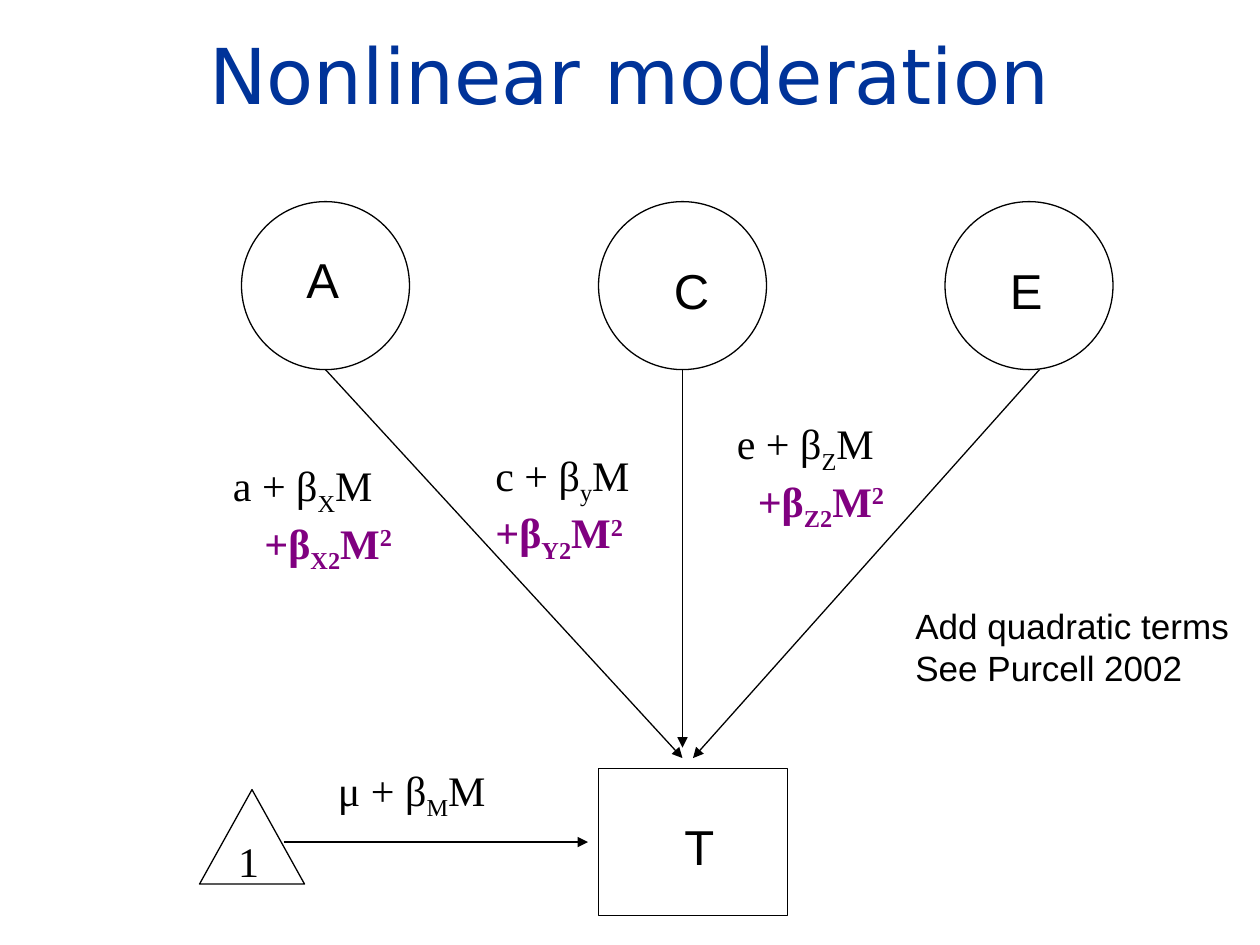
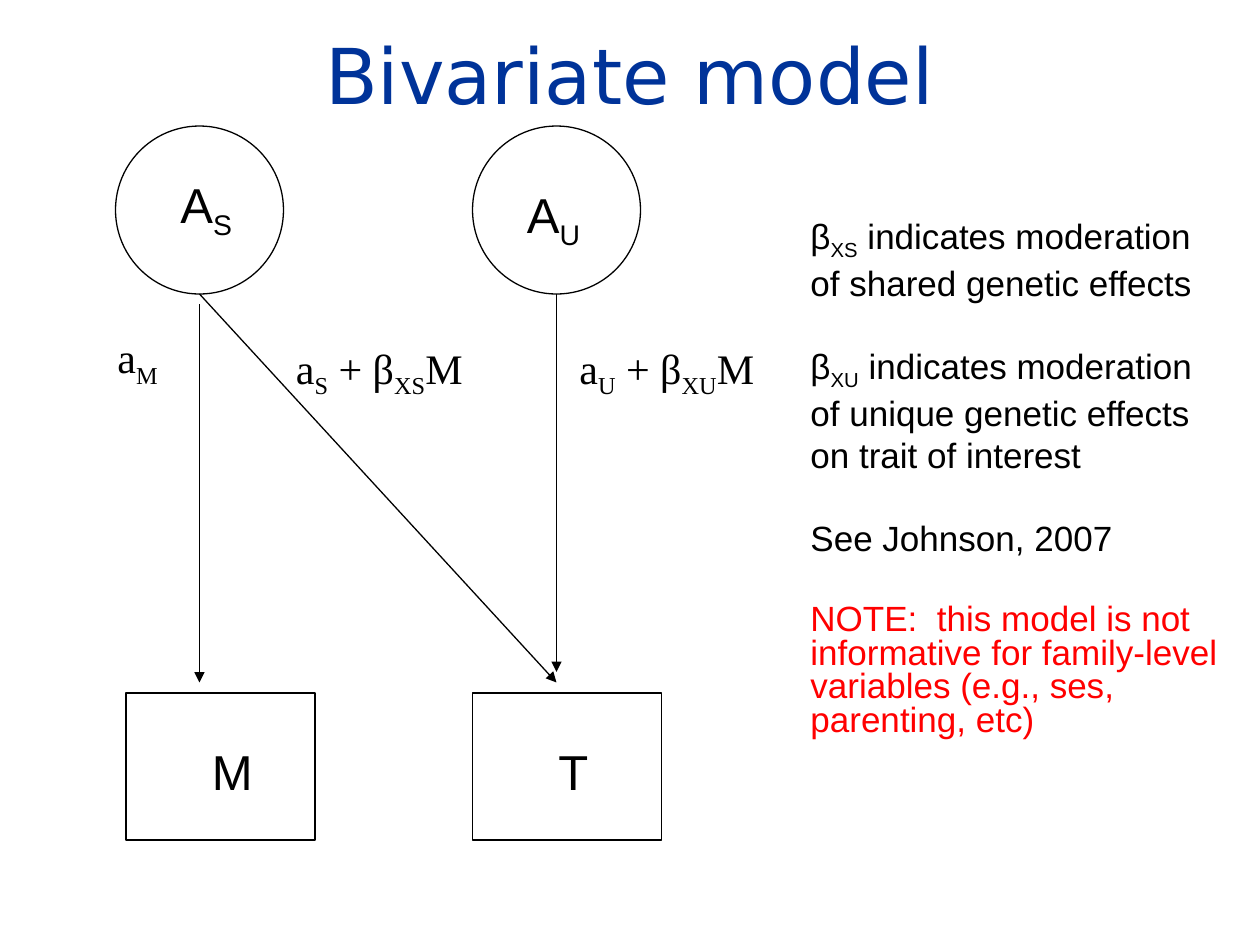
from pptx import Presentation
from pptx.dml.color import RGBColor
from pptx.enum.shapes import MSO_CONNECTOR, MSO_SHAPE
from pptx.enum.text import MSO_ANCHOR, MSO_AUTO_SIZE, PP_ALIGN
from pptx.oxml.ns import qn
from pptx.util import Emu, Pt
from lxml import etree

PX = 7620  # 120 px to the inch
BLACK = RGBColor(0x00, 0x00, 0x00)
BLUE = RGBColor(0x00, 0x33, 0x99)
PURPLE = RGBColor(0x80, 0x00, 0x80)
RED = RGBColor(0xFF, 0x00, 0x00)
SANS, SERIF, TITLE_FONT = "Arial", "Times New Roman", "DejaVu Sans"
LEFT, CENTER = PP_ALIGN.LEFT, PP_ALIGN.CENTER
MIDDLE, FIT_TEXT = MSO_ANCHOR.MIDDLE, MSO_AUTO_SIZE.SHAPE_TO_FIT_TEXT
STRAIGHT = MSO_CONNECTOR.STRAIGHT
CIRCLE, BOX, TRIANGLE = MSO_SHAPE.OVAL, MSO_SHAPE.RECTANGLE, MSO_SHAPE.ISOSCELES_TRIANGLE

NODE_SIZES = {CIRCLE: (160, 160), BOX: (180, 140), TRIANGLE: (100, 90)}
TITLE_BOX = (90, 20, 1020, 150)
TITLE = dict(font=TITLE_FONT, size=44, color=BLUE, align=CENTER)
SYMBOL = dict(size=28, fit=True)
FORMULA = dict(font=SERIF, size=24, fit=True)
NOTE = dict(size=20, fit=True)
BASELINES = {"_": "-25000", "^": "30000"}

# Text: "|" parts runs, "_" lowers, "^" raises, "*" starts bold purple.
# Nodes: kind, left, top. Symbols: text, left, top, width.
# Arrows: from x, y, to x, y. Formulas and notes: box, paragraphs, format.
SLIDES = [
    dict(
        title="Nonlinear moderation",
        nodes=[(CIRCLE, 230, 192), (CIRCLE, 570, 192), (CIRCLE, 900, 192),
               (BOX, 570, 732), (TRIANGLE, 190, 752)],
        symbols=[("A", 280, 232, 60), ("C", 630, 242, 60),
                 ("E", 950, 242, 60), ("T", 640, 772, 60)],
        arrows=[(310, 352, 650, 722), (650, 352, 650, 712),
                (990, 352, 660, 722), (270, 802, 560, 802)],
        formulas=[
            ((210, 432, 193, 109), ["a + β|_X|M", "*+β|_X2|M|^2"], dict(indent=30)),
            ((460, 422, 163, 109), ["c + β|_y|M |*+β|_Y2|M|^2"], {}),
            ((690, 392, 206, 109), ["e + β|_Z|M", "*+β|_Z2|M|^2"], dict(indent=20)),
            ((310, 722, 200, 60), ["μ + β|_M|M"], {}),
        ],
        notes=[((860, 570, 325, 92), ["Add quadratic terms", "See Purcell 2002"], {})],
    ),
    dict(
        title="Bivariate model",
        nodes=[(CIRCLE, 110, 120), (CIRCLE, 450, 120), (BOX, 120, 660), (BOX, 450, 660)],
        symbols=[("A|_S", 160, 160, 90), ("A|_U", 490, 170, 90),
                 ("M", 190, 700, 60), ("T", 520, 700, 60)],
        arrows=[(190, 280, 530, 650), (530, 280, 530, 640), (190, 290, 190, 650)],
        formulas=[
            ((100, 310, 80, 60), ["a|_M"], {}),
            ((270, 320, 205, 60), ["a|_S| + β|_XS|M"], {}),
            ((540, 320, 240, 60), ["a|_U| + β|_XU|M"], {}),
        ],
        notes=[
            ((760, 198, 397, 335),
             ["β|_XS| indicates moderation", "of shared genetic effects",
              "β|_XU| indicates moderation", "of unique genetic effects",
              "on trait of interest", "See Johnson, 2007"],
             dict(gaps={2: 23, 5: 23})),
            ((760, 570, 440, 142),
             ["NOTE:  this model is not informative for family-level variables "
              "(e.g., ses, parenting, etc)"],
             dict(color=RED, line_spacing=0.8)),
        ],
    ),
]


def lengths(*values):
    return [Emu(value * PX) for value in values]


def write(frame, paragraphs, *, font=SANS, size=20, color=BLACK, align=LEFT,
          indent=0, gaps=None, line_spacing=None, fit=False, wrap=True):
    """Fill a frame; indent applies after the first paragraph, gaps are points before."""
    frame.word_wrap = wrap
    for index, text in enumerate(paragraphs):
        paragraph = frame.add_paragraph() if index else frame.paragraphs[0]
        paragraph.alignment = align
        paragraph.line_spacing = line_spacing
        if index and indent:
            paragraph._p.get_or_add_pPr().set("marL", str(indent * PX))
        if gaps and index in gaps:
            paragraph.space_before = Pt(gaps[index])
        highlighted = False
        for part in text.split("|"):
            highlighted = highlighted or part.startswith("*")
            run = paragraph.add_run()
            run.text = part.lstrip("*_^")
            run.font.name = font
            run.font.size = Pt(size)
            run.font.bold = highlighted
            run.font.color.rgb = PURPLE if highlighted else color
            if part[0] in BASELINES:
                run._r.get_or_add_rPr().set("baseline", BASELINES[part[0]])
    if fit:
        frame.auto_size = FIT_TEXT


def add_text(slide, box, paragraphs, **text_format):
    write(slide.shapes.add_textbox(*lengths(*box)).text_frame, paragraphs, **text_format)


def add_node(slide, kind, left, top):
    shape = slide.shapes.add_shape(kind, *lengths(left, top, *NODE_SIZES[kind]))
    shape.shadow.inherit = False
    shape.fill.background()
    shape.line.color.rgb = BLACK
    shape.line.width = Pt(0.75)
    if kind == TRIANGLE:
        shape.text_frame.vertical_anchor = MIDDLE
        write(shape.text_frame, ["1"], font=SERIF, size=24, wrap=False)


def add_arrow(slide, *ends):
    connector = slide.shapes.add_connector(STRAIGHT, *lengths(*ends))
    connector.line.color.rgb = BLACK
    connector.line.width = Pt(0.75)
    line = connector.line._get_or_add_ln()
    etree.SubElement(line, qn("a:tailEnd")).set("type", "triangle")
    etree.SubElement(connector._element.spPr, qn("a:effectLst"))


def build_slide(presentation, content):
    slide = presentation.slides.add_slide(presentation.slide_layouts[6])
    # Path diagram
    for node in content["nodes"]:
        add_node(slide, *node)
    for text, left, top, width in content["symbols"]:
        add_text(slide, (left, top, width, 68), [text], **SYMBOL)
    for arrow in content["arrows"]:
        add_arrow(slide, *arrow)
    # Path formulas, side notes and title
    for group, style in (("formulas", FORMULA), ("notes", NOTE)):
        for box, paragraphs, extra in content[group]:
            add_text(slide, box, paragraphs, **style, **extra)
    add_text(slide, TITLE_BOX, [content["title"]], **TITLE)


def main():
    presentation = Presentation()
    presentation.slide_width, presentation.slide_height = lengths(1200, 900)
    for content in SLIDES:
        build_slide(presentation, content)
    presentation.save("out.pptx")


if __name__ == "__main__":
    main()
